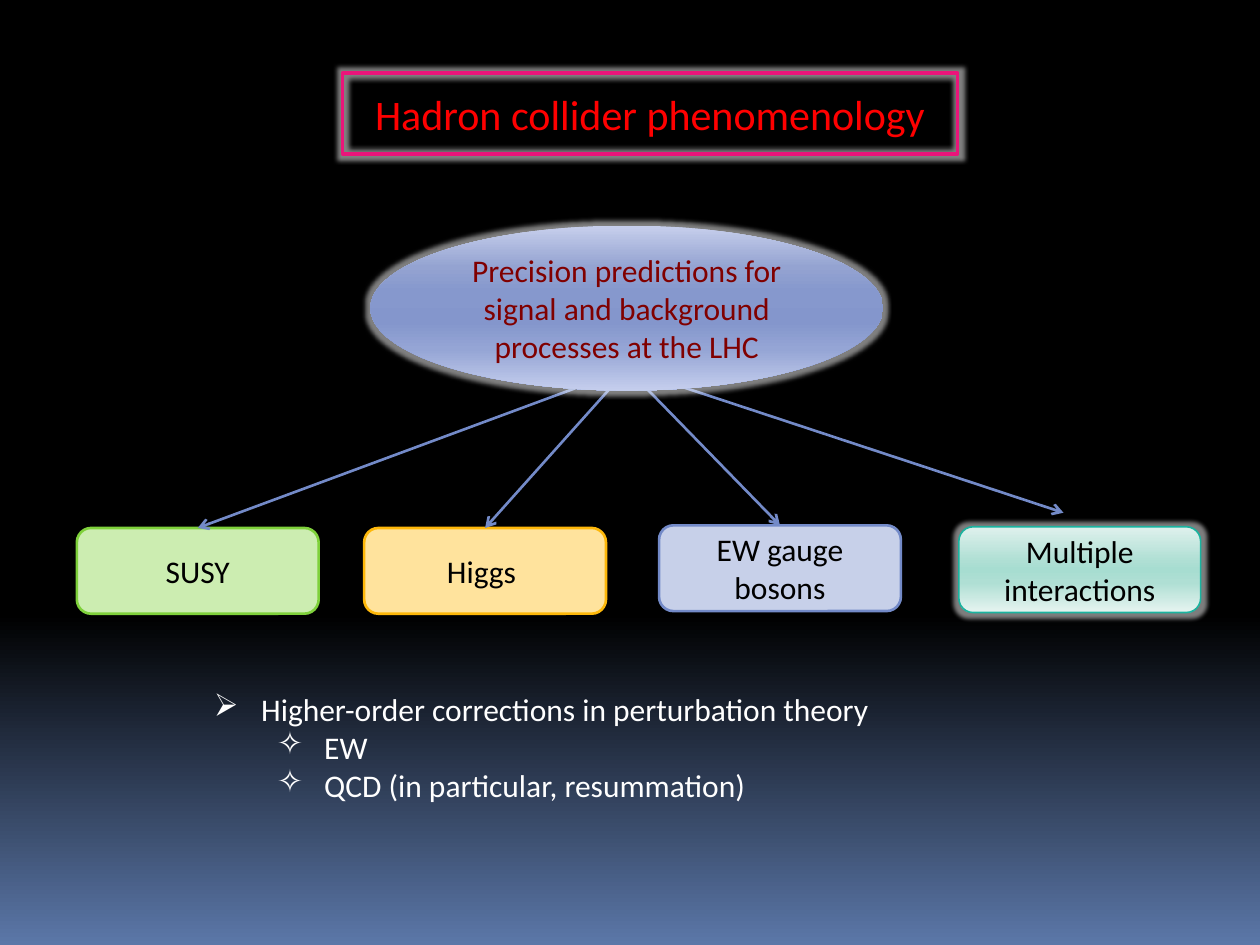
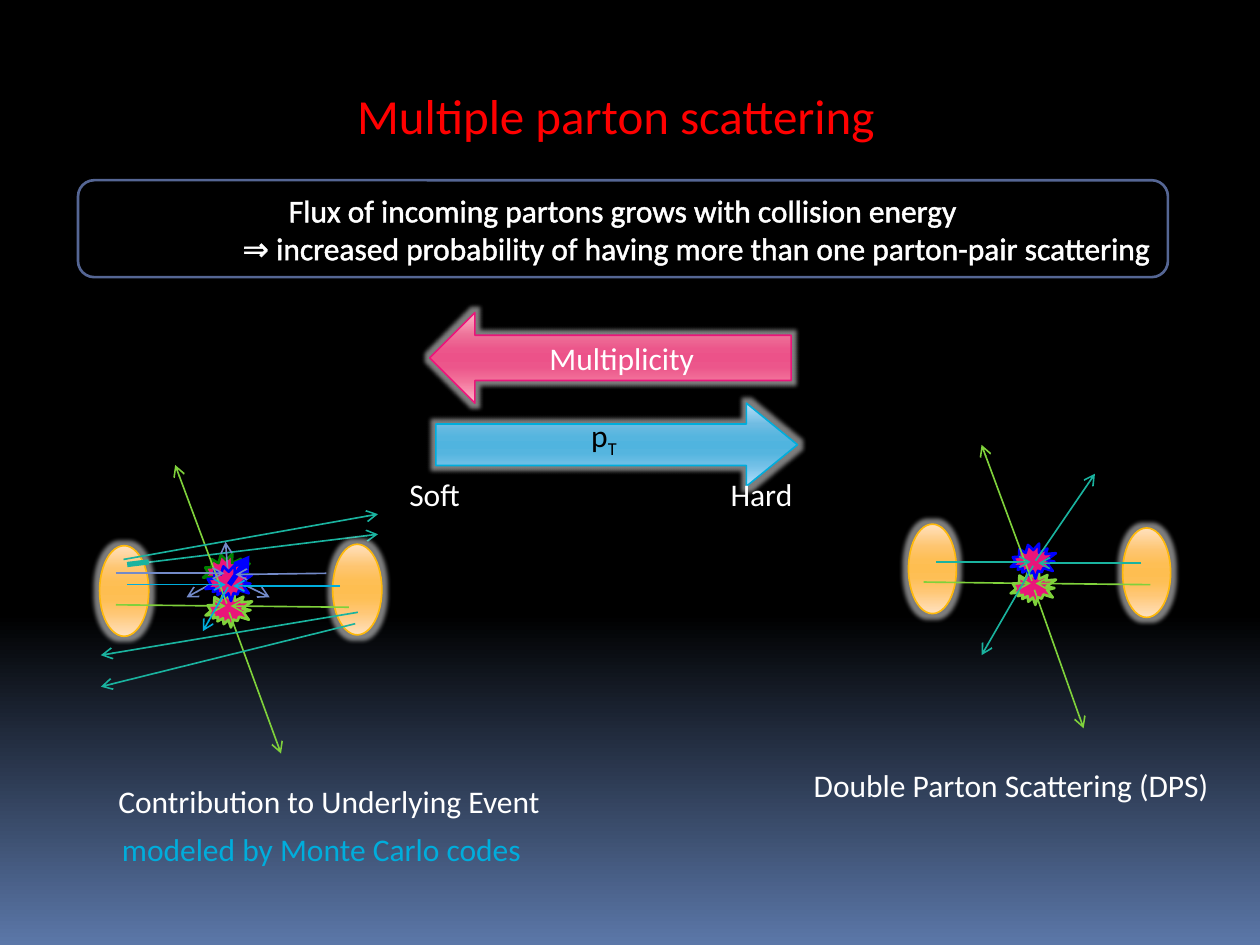
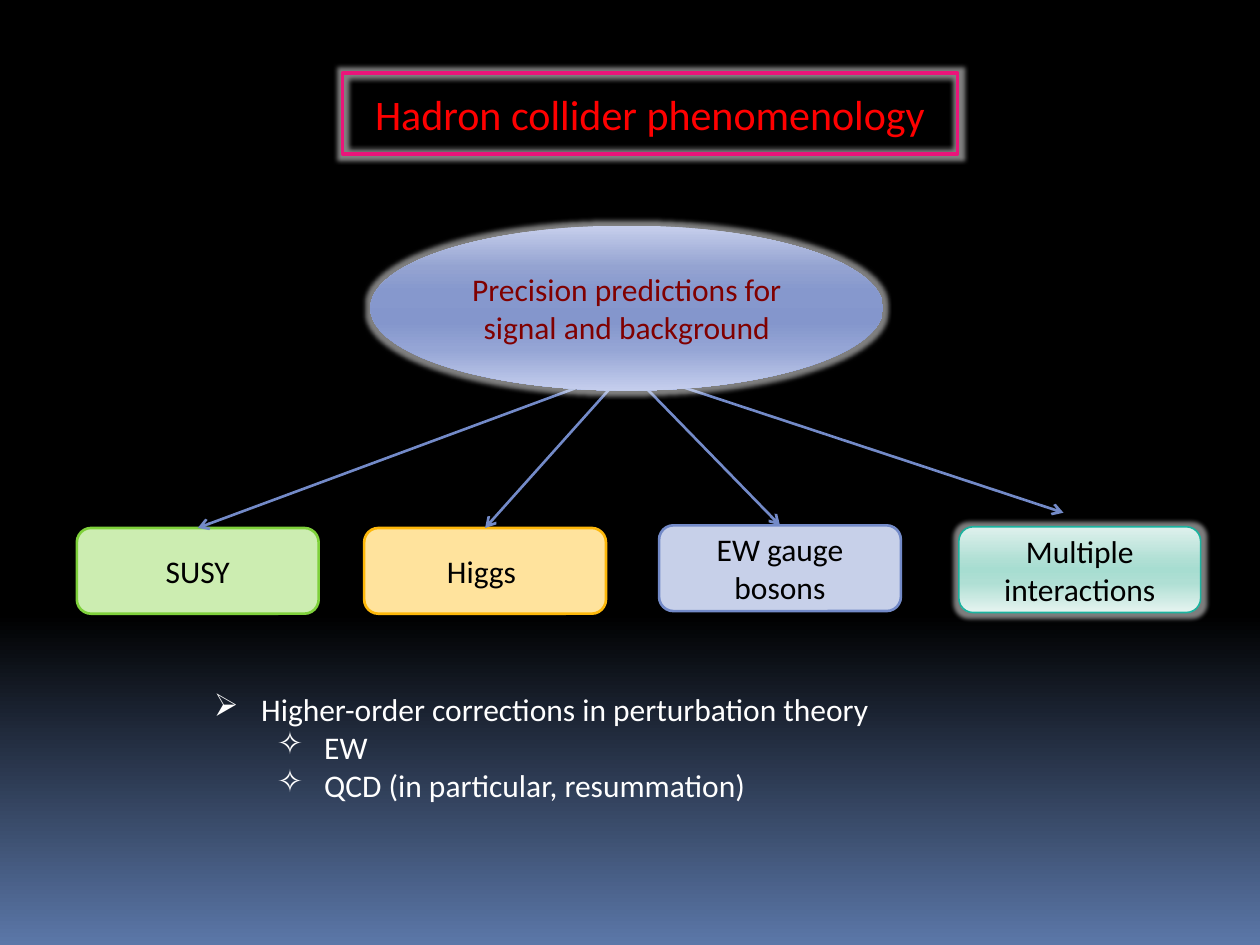
from lxml import etree
from pptx import Presentation
from pptx.dml.color import RGBColor
from pptx.enum import shapes, text
from pptx.oxml.ns import qn
from pptx.util import Pt

KIND = shapes.MSO_SHAPE
ALIGN = text.PP_ALIGN
ANCHOR = text.MSO_ANCHOR
FONT = "Calibri"
WHITE, BLACK, RED, MAROON = "FFFFFF", "000000", "FF0000", "800000"
PINK, LIME, AMBER, TEAL = "EA157A", "7FD13B", "FEB80A", "1AB39F"
PERIWINKLE, CYAN, BLUE, GREEN = "738AC8", "00ADDC", "0000FF", "008000"
THIN, MEDIUM, FRAME, THICK = 0.94, 1.5, 2, 3

NIGHT = [(0, BLACK), (65, BLACK), (100, "5B77A8")]
MINT = [(0, "DFF1ED"), (40, "AFDFD4"), (50, "A7DDD1"), (65, "AFDFD4"), (100, "E6F4F0")]


def glossy(*colours):
    return list(zip((0, 25, 40, 50, 60, 75, 100), colours))


LAVENDER = glossy("C7CFEC", "94A3D1", "8698CD", "8496CC", "8698CD", "95A5D5", "C5CEED")
SKY = glossy("B7DFF8", "70BCE2", "55B5DF", "50B4DF", "55B5DF", "72C0E7", "B4DFFB")
ROSE = glossy("FFB6C9", "ED7198", "EC568B", "EC5289", "EC568B", "F2729A", "FFB6C9")
ORANGE = glossy("FFE1BF", "FEC570", "FEBF55", "FEBE51", "FEBF55", "FFC775", "FFE1BF")

OVERVIEW_TITLE = "Hadron collider phenomenology"
GOAL = "Precision predictions for signal and background"
GOAL_END = "processes at the LHC"
HUB = (358.6, 210.8)
PROCESS_SIZE = (138.2, 49)
PROCESSES = [
    ("SUSY", 43.9, 301.7, "CCEDB1", LIME, (0, 0)),
    ("Higgs ", 208.1, 301.7, "FFE39D", AMBER, (0, 0)),
    ("EW gauge bosons", 376.6, 300.2, "C7D0E9", PERIWINKLE, (0, 0)),
    ("Multiple interactions", 547.9, 301, MINT, TEAL, (-9.3, -8)),
]
CORRECTIONS = [
    (1, "➢", "Higher-order corrections in perturbation theory"),
    (2, "✧", "EW"),
    (2, "✧", "QCD (in particular, resummation)"),
]

SCATTERING_TITLE = "Multiple parton scattering "
FLUX = [
    "Flux of incoming partons grows with collision energy",
    "⇒ increased probability of having more than one parton-pair scattering",
]
LABELS = [
    ("Soft", (226.8, 267.8, 91.4, 28.8), WHITE),
    ("Hard", (410.4, 267.8, 91.4, 28.8), WHITE),
    ("Contribution to Underlying Event", (60.5, 443.5, 278, 28.8), WHITE),
    ("Double Parton Scattering (DPS)", (457.9, 434.2, 278, 28.8), WHITE),
    ("modeled by Monte Carlo codes", (62.6, 470.9, 302.4, 28.8), CYAN),
]
UNDERLYING_EVENT = [
    ("track", PERIWINKLE, (131, 329.8), (154.1, 341.3)),
    ("track", PERIWINKLE, (131.8, 327.6), (106.6, 341.3)),
    ("burst", GREEN, (118.8, 313.9)),
    ("track", TEAL, (74.2, 322.6), (216, 305.3)),
    ("track", PERIWINKLE, (130.3, 328.3), (128.9, 309.6)),
    ("burst", LIME, (120.2, 335.5)),
    ("burst", BLUE, (120.2, 320.4)),
    ("proton", AMBER, (56.9, 311.8)),
    ("proton", AMBER, (190.1, 311)),
    ("track", LIME, (66.2, 345.6), (128.9, 346.3)),
    ("track", LIME, (199.4, 347), (131.8, 346.3)),
    ("track", LIME, (129.6, 344.9), (100.1, 265.7)),
    ("track", LIME, (131, 349.9), (160.6, 430.6)),
    ("track", CYAN, (72.7, 334.1), (128.9, 334.1)),
    ("track", CYAN, (194.4, 334.8), (133.2, 334.8)),
    ("track", BLUE, (131, 334.1), (142.6, 317.5), THICK),
    ("track", CYAN, (130.3, 335.5), (115.9, 360.7)),
    ("track", PERIWINKLE, (66.2, 327.6), (128.2, 327.6)),
    ("track", PERIWINKLE, (186.5, 327.6), (134.6, 328.3)),
    ("track", TEAL, (70.6, 319.7), (216, 293.8)),
    ("track", TEAL, (72.7, 322.6), (85, 321.1), THICK, False),
    ("track", TEAL, (204.5, 349.9), (57.6, 374.4)),
    ("track", TEAL, (203, 356.4), (57.6, 392.4)),
]
DOUBLE_SCATTERING = [
    ("burst", LIME, (580.3, 323.3)),
    ("burst", BLUE, (580.3, 308.2)),
    ("proton", AMBER, (519.1, 299.5)),
    ("proton", AMBER, (641.5, 301.7)),
    ("track", LIME, (527.8, 332.6), (589, 333.4)),
    ("track", LIME, (657.4, 334.1), (591.8, 333.4)),
    ("track", LIME, (589.7, 331.9), (560.9, 254.2)),
    ("track", LIME, (591.1, 337), (619.2, 416.2)),
    ("track", TEAL, (535, 321.1), (589, 321.1)),
    ("track", TEAL, (652.3, 321.8), (593.3, 321.8)),
    ("track", TEAL, (591.8, 320.4), (625.7, 270.7)),
    ("track", TEAL, (590.4, 323.3), (560.9, 374.4)),
]


def rgb(colour):
    return RGBColor.from_string(colour)


def add_xml(parent, tag, **attributes):
    return etree.SubElement(parent, qn(tag), attributes)


def paint(fill, owner, value):
    if value is None:
        fill.background()
        return
    fill.solid()
    if isinstance(value, str):
        fill.fore_color.rgb = rgb(value)
        return
    gradient = etree.Element(qn("a:gradFill"), rotWithShape="1")
    stops = add_xml(gradient, "a:gsLst")
    for position, colour in value:
        stop = add_xml(stops, "a:gs", pos=str(position * 1000))
        add_xml(stop, "a:srgbClr", val=colour)
    add_xml(gradient, "a:lin", ang="5400000", scaled="0")
    owner.replace(owner.find(qn("a:solidFill")), gradient)


def stroke(line, colour, width):
    line.color.rgb = rgb(colour)
    line.width = Pt(width)


def glow(shape):
    shape.shadow.inherit = False
    effects = shape._element.spPr.find(qn("a:effectLst"))
    halo = add_xml(effects, "a:glow", rad=str(Pt(5)))
    colour = add_xml(halo, "a:srgbClr", val=WHITE)
    add_xml(colour, "a:alpha", val="50000")


def place(shape, frame):
    shape.left, shape.top, shape.width, shape.height = map(Pt, frame)


def write(shape, paragraphs, colour, size=18, align=ALIGN.CENTER, anchor=ANCHOR.MIDDLE):
    body = shape.text_frame
    body.word_wrap = True
    body.auto_size = text.MSO_AUTO_SIZE.NONE
    body.vertical_anchor = anchor
    for index, spans in enumerate(paragraphs):
        para = body.paragraphs[0] if index == 0 else body.add_paragraph()
        para.alignment = align
        for words in spans:
            span = para.add_run()
            span.text = words
            span.font.name = FONT
            span.font.size = Pt(size)
            span.font.color.rgb = rgb(colour)
    return body


def add_title(page, words, frame, size):
    title = page.shapes.title
    place(title, frame)
    write(title, [[words]], RED, size)
    return title


def add_box(canvas, kind, frame, fill=None, line=None, width=THIN, glowing=False):
    box = canvas.add_shape(kind, *map(Pt, frame))
    box.shadow.inherit = False
    paint(box.fill, box._element.spPr, fill)
    if line:
        stroke(box.line, line, width)
    else:
        box.line.fill.background()
    if glowing:
        glow(box)
    return box


def add_label(page, frame, paragraphs, colour):
    label = page.shapes.add_textbox(*map(Pt, frame))
    return write(label, paragraphs, colour, align=ALIGN.LEFT, anchor=ANCHOR.TOP)


def add_track(canvas, colour, start, end, width=THIN, arrow=True):
    track = canvas.add_connector(shapes.MSO_CONNECTOR.STRAIGHT, *map(Pt, start + end))
    stroke(track.line, colour, width)
    if arrow:
        add_xml(track.line._get_or_add_ln(), "a:tailEnd", type="arrow")
    add_xml(track._element.spPr, "a:effectLst")


def add_collision(canvas, parts, burst_size, proton_size):
    for kind, colour, corner, *rest in parts:
        if kind == "track":
            add_track(canvas, colour, corner, *rest)
        elif kind == "burst":
            burst = add_box(canvas, KIND.EXPLOSION2, corner + burst_size, PINK, colour, MEDIUM)
            burst.rotation = 51.8
        else:
            add_box(canvas, KIND.OVAL, corner + proton_size, ORANGE, colour, glowing=True)


def add_overview(deck, goal):
    page = deck.slides.add_slide(deck.slide_layouts[5])
    title = add_title(page, OVERVIEW_TITLE, (195.8, 41.8, 351.4, 46.1), 24)
    outline = add_xml(title._element.spPr, "a:prstGeom", prst="roundRect")
    add_xml(outline, "a:avLst")
    title.fill.background()
    stroke(title.line, PINK, FRAME)
    glow(title)

    width, height = PROCESS_SIZE
    for name, left, top, fill, line, (shift_x, shift_y) in PROCESSES:
        special = fill is MINT
        box = add_box(page.shapes, KIND.ROUNDED_RECTANGLE, (left, top, width, height),
                      fill, line, THIN if special else MEDIUM, special)
        write(box, [[name]], BLACK)
        tip = (left + width / 2 + shift_x, top + shift_y)
        add_track(page.shapes, PERIWINKLE, HUB, tip, MEDIUM)

    oval = add_box(page.shapes, KIND.OVAL, (211.7, 128.9, 293, 94.3), LAVENDER, glowing=True)
    write(oval, [[words] for words in goal], MAROON)

    body = add_label(page, (79.2, 391, 623.5, 159.8),
                     [[words] for _, _, words in CORRECTIONS], WHITE)
    for para, (level, bullet, _) in zip(body.paragraphs, CORRECTIONS):
        para.level = level
        properties = para._p.get_or_add_pPr()
        properties.set("marL", str(Pt(27 + 36 * level)))
        properties.set("indent", str(Pt(-27)))
        add_xml(properties, "a:buChar", char=bullet)


def add_scattering(deck):
    page = deck.slides.add_slide(deck.slide_layouts[5])
    add_title(page, SCATTERING_TITLE, (135.4, 45.4, 439.2, 41), 28)

    flux = add_box(page.shapes, KIND.ROUNDED_RECTANGLE, (44.6, 103, 622.8, 55.4),
                   line="556694", width=MEDIUM)
    body = write(flux, [[words] for words in FLUX], WHITE)
    body.paragraphs[1].alignment = ALIGN.RIGHT
    for para in body.paragraphs:
        properties = para.runs[0]._r.get_or_add_rPr()
        edge = etree.Element(qn("a:ln"), w=str(Pt(1.45)))
        add_xml(add_xml(edge, "a:solidFill"), "a:srgbClr", val=WHITE)
        properties.insert(0, edge)

    momentum = add_box(page.shapes, KIND.RIGHT_ARROW, (249.1, 230.4, 206.6, 47.5),
                       SKY, CYAN, glowing=True)
    momentum.adjustments[1] = 0.613
    body = write(momentum, [["p", "T"]], BLACK, anchor=ANCHOR.BOTTOM)
    body.paragraphs[0].runs[1]._r.get_or_add_rPr().set("baseline", "-25000")

    multiplicity = add_box(page.shapes, KIND.LEFT_ARROW, (245.5, 178.6, 206.6, 51.8),
                           ROSE, PINK, glowing=True)
    write(multiplicity, [["Multiplicity"]], WHITE)

    add_collision(page.shapes, UNDERLYING_EVENT, (22.3, 25.9), (28.1, 51.8))
    group = page.shapes.add_group_shape()
    add_collision(group.shapes, DOUBLE_SCATTERING, (21.6, 25.2), (27.4, 51.1))
    for words, frame, colour in LABELS:
        add_label(page, frame, [[words]], colour)


def main():
    deck = Presentation()
    deck.slide_width, deck.slide_height = Pt(720), Pt(540)
    master = deck.slide_master
    fill = master.background.fill
    fill.solid()
    paint(fill, master._element.find(".//" + qn("p:bgPr")), NIGHT)
    add_overview(deck, [GOAL, GOAL_END])
    add_scattering(deck)
    add_overview(deck, [GOAL])
    deck.save("out.pptx")


if __name__ == "__main__":
    main()
